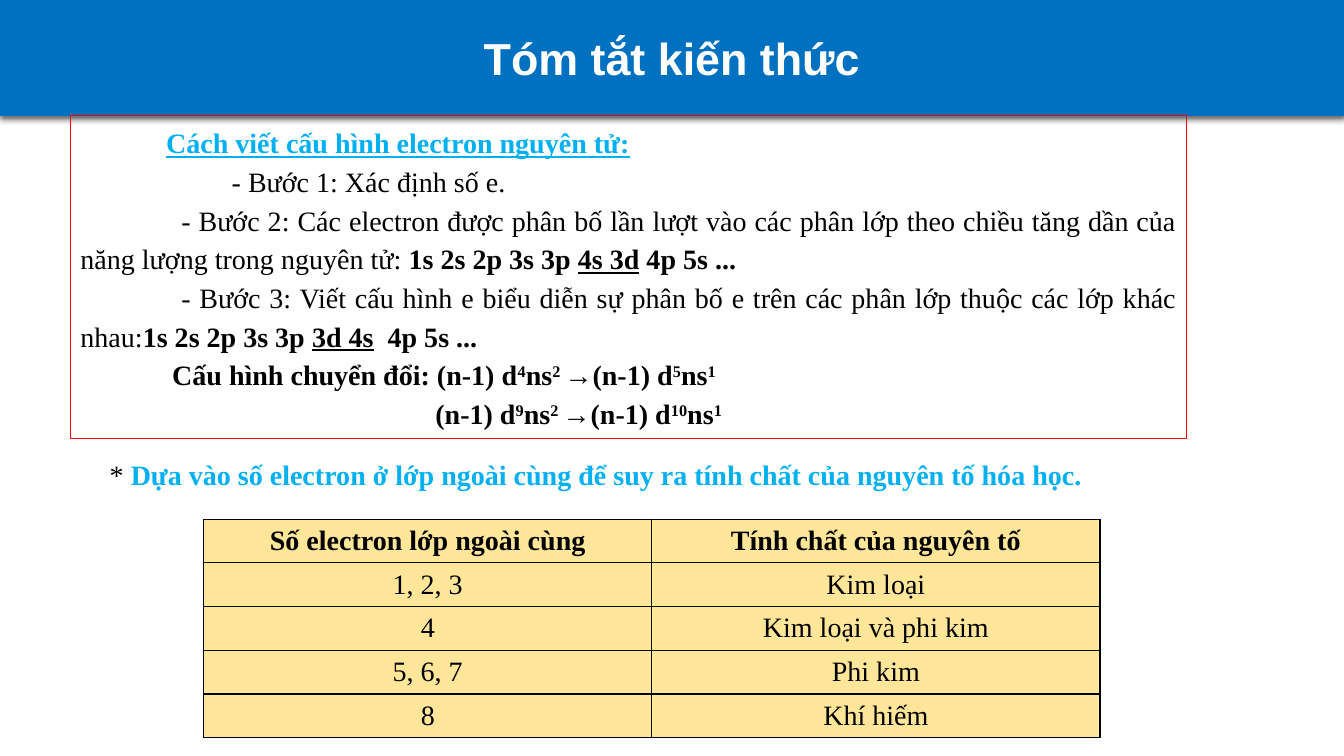
"""Build a summary slide on writing electron configurations."""
import lxml.etree
import pptx
import pptx.chart.data
import pptx.dml.color
import pptx.enum.shapes
import pptx.enum.text
import pptx.oxml
import pptx.oxml.ns
import pptx.util

Inches = pptx.util.Inches
Pt = pptx.util.Pt
ALIGN = pptx.enum.text.PP_ALIGN
MIDDLE = pptx.enum.text.MSO_ANCHOR.MIDDLE
NAMESPACE = pptx.oxml.ns.nsdecls("a")
BLACK, SKY, WHITE = "000000", "00B0F0", "FFFFFF"


def color(value):
    """Return the colour of a hex string."""
    return pptx.dml.color.RGBColor.from_string(value)


def add_run(paragraph, text, style="", ink=BLACK, size=20, face="Times New Roman"):
    """Add a run; style letters are b for bold, u for underline, s for superscript."""
    run = paragraph.add_run()
    run.text = text
    run.font.name = face
    run.font.size = Pt(size)
    run.font.bold = "b" in style
    run.font.underline = "u" in style
    run.font.color.rgb = color(ink)
    if "s" in style:
        run.font._element.set("baseline", "30000")


presentation = pptx.Presentation()
presentation.slide_width = Inches(13.33)
presentation.slide_height = Inches(7.5)
slide = presentation.slides.add_slide(presentation.slide_layouts[5])

title = slide.shapes.title
title.left, title.top = Inches(0), Inches(0)
title.width, title.height = Inches(13.33), Inches(1.15)
title.fill.solid()
title.fill.fore_color.rgb = color("0070C0")
title._element.spPr.append(pptx.oxml.parse_xml(
    f'<a:effectLst {NAMESPACE}><a:outerShdw blurRad="{Pt(4.5)}" dist="{Pt(1.5)}" '
    'dir="5400000" algn="t" rotWithShape="0"><a:srgbClr val="000000">'
    '<a:alpha val="63000"/></a:srgbClr></a:outerShdw></a:effectLst>'))
title.text_frame.auto_size = pptx.enum.text.MSO_AUTO_SIZE.NONE
title.text_frame.vertical_anchor = MIDDLE
title_paragraph = title.text_frame.paragraphs[0]
title_paragraph.alignment = ALIGN.CENTER
add_run(title_paragraph, "Tóm tắt kiến thức", "b", WHITE, 32, "Arial")

steps = [
    (0.85, [("Cách viết cấu hình electron nguyên tử:", "bu", SKY)]),
    (1.5, [("- Bước 1: Xác định số e.",)]),
    (1, [("- Bước 2: Các electron được phân bố lần lượt vào các phân lớp theo "
          "chiều tăng dần của năng lượng trong nguyên tử: ",),
         ("1s 2s 2p 3s 3p ", "b"), ("4s 3d", "bu"), (" 4p 5s ...", "b")]),
    (1, [("- Bước 3: Viết cấu hình e biểu diễn sự phân bố e trên các phân lớp "
          "thuộc các lớp khác nhau:",),
         ("1s 2s 2p 3s 3p ", "b"), ("3d 4s", "bu"), ("  4p 5s ...", "b")]),
]
for indent, lead, before, after in [(0.91, "Cấu hình chuyển đổi: ", "4", "5"),
                                    (3.52, "", "9", "10")]:
    steps.append((indent, [
        (lead + "(n-1) d", "b"), (before, "bs"), ("ns", "b"), ("2 ", "bs"),
        ("→(n-1) d", "b"), (after, "bs"), ("ns", "b"), ("1", "bs")]))

steps_box = slide.shapes.add_shape(
    pptx.enum.shapes.MSO_SHAPE.RECTANGLE,
    Inches(0.7), Inches(1.15), Inches(11.07), Inches(3.2))
steps_box.shadow.inherit = False
steps_box.fill.background()
steps_box.line.color.rgb = color("FF0000")
steps_box.line.width = Pt(0.75)
steps_frame = steps_box.text_frame
steps_frame.word_wrap = True
steps_frame.vertical_anchor = pptx.enum.text.MSO_ANCHOR.TOP
for index, (indent, runs) in enumerate(steps):
    paragraph = steps_frame.add_paragraph() if index else steps_frame.paragraphs[0]
    paragraph.alignment = ALIGN.JUSTIFY
    paragraph.line_spacing = 1.15
    paragraph._p.get_or_add_pPr().set("indent", str(Inches(indent)))
    for run in runs:
        add_run(paragraph, *run)

note = slide.shapes.add_textbox(Inches(0.99), Inches(4.49), Inches(10.96), Inches(0.44))
note.text_frame.word_wrap = True
note_paragraph = note.text_frame.paragraphs[0]
add_run(note_paragraph, "* ")
add_run(note_paragraph, "Dựa vào số electron ở lớp ngoài cùng để suy ra tính chất "
        "của nguyên tố hóa học.", "b", SKY)

rows = [
    ("Số electron lớp ngoài cùng", "Tính chất của nguyên tố"),
    ("1, 2, 3", "Kim loại"),
    ("4", "Kim loại và phi kim"),
    ("5, 6, 7", "Phi kim"),
    ("8", "Khí hiếm"),
]
table = slide.shapes.add_table(
    len(rows), 2, Inches(2.02), Inches(5.15), Inches(8.89), Inches(2.17)).table
for row_index, row in enumerate(rows):
    for column_index, text in enumerate(row):
        cell = table.cell(row_index, column_index)
        cell.vertical_anchor = MIDDLE
        for side in "LRTB":
            cell._tc.get_or_add_tcPr().append(pptx.oxml.parse_xml(
                f'<a:ln{side} {NAMESPACE} w="{Pt(1)}"><a:solidFill>'
                f'<a:srgbClr val="{BLACK}"/></a:solidFill></a:ln{side}>'))
        cell.fill.solid()
        cell.fill.fore_color.rgb = color("FFE699")
        paragraph = cell.text_frame.paragraphs[0]
        paragraph.alignment = ALIGN.CENTER
        add_run(paragraph, text, "" if row_index else "b")

presentation.save("out.pptx")
